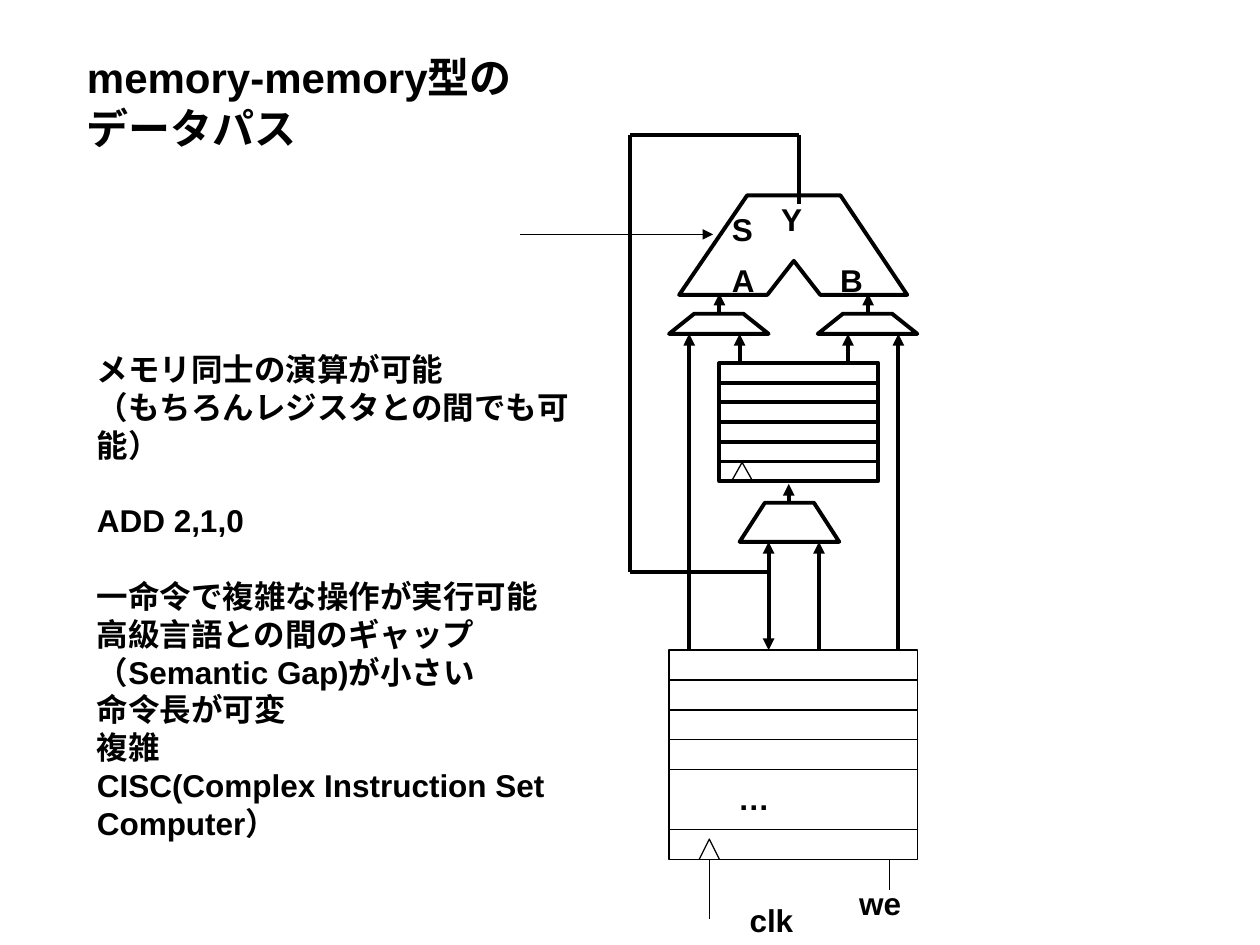
from lxml import etree
from pptx import Presentation
from pptx import util as u
from pptx.dml.color import RGBColor
from pptx.enum import shapes, text
from pptx.oxml.ns import qn

PX = 9144  # EMU per px, 100 px to the inch
BLACK = RGBColor(0, 0, 0)
FONT = "Arial"
THIN, THICK = 0.75, 2.25


def px(*lengths):
    return [round(length * PX) for length in lengths]


def write(frame, paragraphs, size=18, wrap=False, gap_before=()):
    """Fill a text frame; paragraphs listed in gap_before get one line of space above."""
    frame.word_wrap = wrap
    frame.auto_size = text.MSO_AUTO_SIZE.NONE
    frame.vertical_anchor = text.MSO_ANCHOR.TOP
    for number, words in enumerate(paragraphs):
        paragraph = frame.paragraphs[0] if number == 0 else frame.add_paragraph()
        paragraph.alignment = text.PP_ALIGN.LEFT
        if number in gap_before:
            paragraph.space_before = u.Pt(size * 1.2)
        run = paragraph.add_run()
        run.text = words
        run.font.name = FONT
        run.font.size = u.Pt(size)
        run.font.bold = True
        run.font.color.rgb = BLACK


def label(slide, words, x, y, w=38):
    write(slide.shapes.add_textbox(*px(x, y, w, 40)).text_frame, [words])


def outline(shape, weight):
    shape.shadow.inherit = False
    shape.fill.background()
    shape.line.color.rgb = BLACK
    shape.line.width = u.Pt(weight)


def wire(slide, start, end, weight=THICK, arrow=False):
    line = slide.shapes.add_connector(
        shapes.MSO_CONNECTOR.STRAIGHT, *px(*start, *end))
    line.line.color.rgb = BLACK
    line.line.width = u.Pt(weight)
    if arrow:
        etree.SubElement(line.line._get_or_add_ln(), qn("a:tailEnd"), type="triangle")
    etree.SubElement(line._element.spPr, qn("a:effectLst"))


def polygon(slide, x, y, points, weight=THICK, close=True):
    first, *others = [(x + dx, y + dy) for dx, dy in points]
    builder = slide.shapes.build_freeform(*first, scale=PX)
    builder.add_line_segments(others, close=close)
    outline(builder.convert_to_shape(), weight)


def clock_mark(slide, x, bottom, half):
    polygon(slide, x, bottom, [(-half, 0), (0, -16), (half, 0)], THIN, close=False)


def rows(slide, x, y, w, h, spans, weight):
    """Stack rectangles whose heights follow spans."""
    pitch = h / sum(spans)
    for span in spans:
        row = slide.shapes.add_shape(
            shapes.MSO_SHAPE.RECTANGLE, *px(x, y, w, span * pitch))
        outline(row, weight)
        y += span * pitch


def title(slide, x, y, w, h):
    heading = slide.shapes.title
    heading.left, heading.top, heading.width, heading.height = px(x, y, w, h)
    write(heading.text_frame, ["memory-memory型の", "データパス"], size=24, wrap=True)


def remarks(slide, x, y, w, h):
    box = slide.shapes.add_textbox(*px(x, y, w, h))
    write(box.text_frame, [
        "メモリ同士の演算が可能",
        "（もちろんレジスタとの間でも可能）",
        "ADD 2,1,0",
        "一命令で複雑な操作が実行可能",
        "高級言語との間のギャップ（Semantic Gap)が小さい",
        "命令長が可変",
        "複雑",
        "CISC(Complex Instruction Set",
        "Computer）",
    ], wrap=True, gap_before=(2, 3))


def alu(slide, x, y, w, h):
    polygon(slide, x, y, [(0, h), (54, 0), (w - 53, 0), (w, h),
                          (112, h), (91, h - 27), (70, h)])
    for name, dx, dy in (("A", 32, 47), ("B", 118, 47), ("Y", 71, -1), ("S", 32, 7)):
        label(slide, name, x + dx, y + dy)


def multiplexer(slide, x, y, w, h):
    polygon(slide, x, y, [(0, h), (20, 0), (w - 20, 0), (w, h)])


def register_file(slide, x, y, w, h):
    rows(slide, x, y, w, h, [1] * 6, THICK)
    clock_mark(slide, x + 18, y + h + 1, half=9)


def memory(slide, x, y, w, h):
    bottom = y + h
    rows(slide, x, y, w, h, [1, 1, 1, 1, 2, 1], THIN)
    label(slide, "…", x + 45, y + 97, w=45)
    clock_mark(slide, x + 32, bottom, half=8)
    wire(slide, (x + 32, bottom), (x + 32, bottom + 47), THIN)
    wire(slide, (x + 175, bottom), (x + 175, bottom + 24), THIN)
    label(slide, "clk", x + 54, bottom + 28, w=55)
    label(slide, "we", x + 141, bottom + 15, w=53)


def feedback(slide, x, y, w, h):
    """Carry the ALU output round the left side to the write bus."""
    output = x + 134
    corners = [(output, y + 55), (output, y), (x, y), (x, y + h), (x + w, y + h)]
    for start, end in zip(corners, corners[1:]):
        wire(slide, start, end)


def arrows(slide):
    upward = [
        (571, 249, 233), (689, 249, 233),  # multiplexers to ALU
        (587, 289, 265), (673, 289, 265),  # registers to multiplexers
        (547, 516, 265), (713, 516, 265),  # memory to multiplexers
        (626, 399, 384),                   # multiplexer to registers
        (650, 516, 430),                   # memory to multiplexer
    ]
    write_bus = [(610, 454, 430), (610, 454, 516)]
    for x, start, end in upward + write_bus:
        wire(slide, (x, start), (x, end), arrow=True)
    wire(slide, (413, 186), (566, 186), THIN, arrow=True)


def main():
    deck = Presentation()
    deck.slide_width, deck.slide_height = px(1000, 750)
    slide = deck.slides.add_slide(deck.slide_layouts[5])
    title(slide, 59, 36, 358, 90)
    remarks(slide, 67, 273, 402, 370)
    feedback(slide, 500, 107, 110, 347)
    alu(slide, 539, 155, 181, 79)
    for left in (531, 649):
        multiplexer(slide, left, 249, 79, 16)
    register_file(slide, 571, 288, 126, 94)
    multiplexer(slide, 587, 399, 79, 31)
    memory(slide, 531, 516, 197, 166)
    arrows(slide)
    deck.save("out.pptx")


if __name__ == "__main__":
    main()
